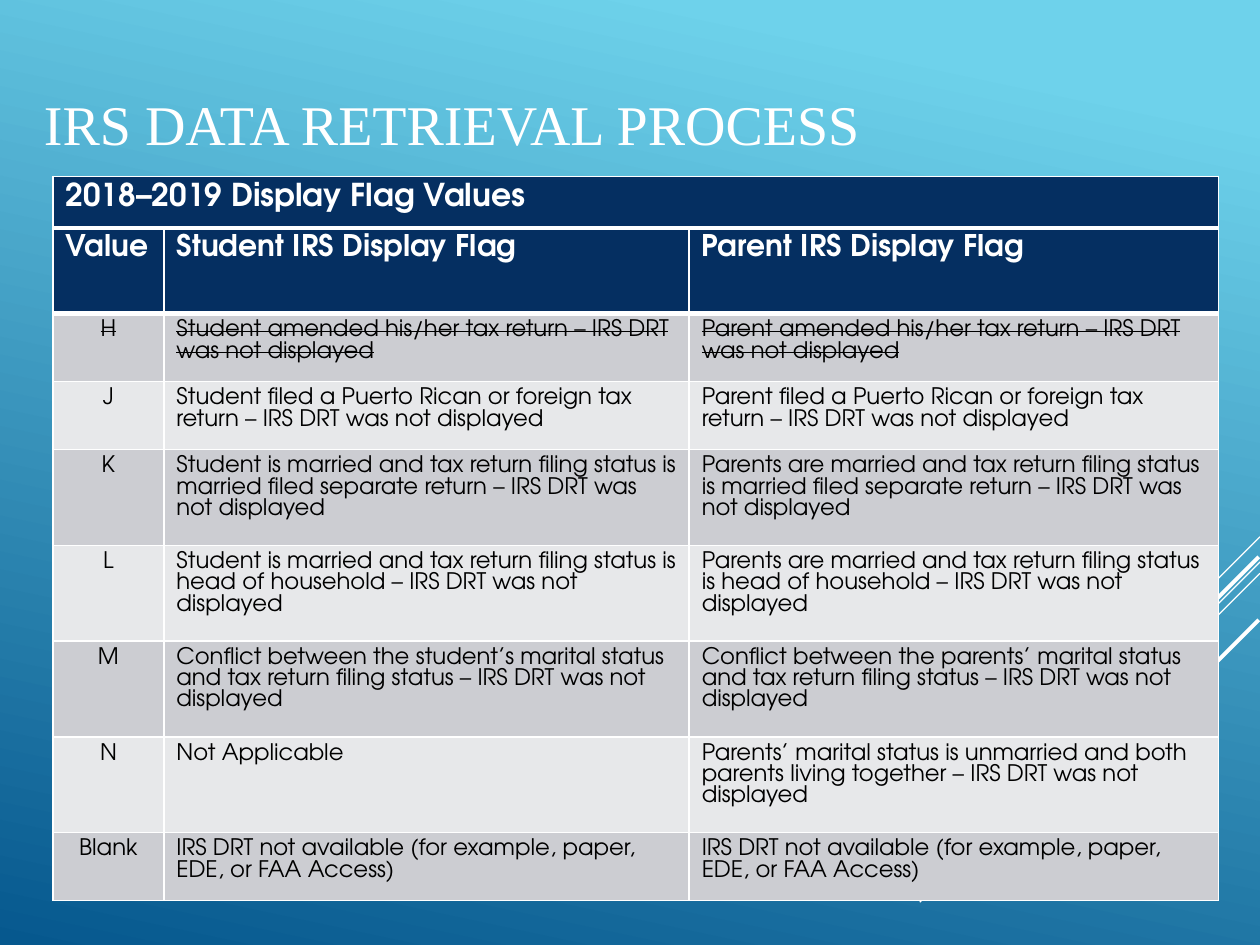
from lxml import etree
from pptx import Presentation
from pptx import util as u
from pptx.dml.color import RGBColor
from pptx.enum import shapes, text
from pptx.oxml import ns

WHITE, BLACK, NAVY = "FFFFFF", "000000", "052F61"
BANDS = ("CCCDD2", "E7E8EA")
BODY_FONT, TITLE_FONT = "TeX Gyre Adventor", "Times New Roman"
HEADER = {"ink": WHITE, "bold": True}

HEADINGS = ("Value", "Student IRS Display Flag", "Parent IRS Display Flag")
FLAGS = [
    ("H", "Student amended his/her tax return – IRS DRT was not displayed",
     "Parent amended his/her tax return – IRS DRT was not displayed"),
    ("J", "Student filed a Puerto Rican or foreign tax return – IRS DRT was not displayed",
     "Parent filed a Puerto Rican or foreign tax return – IRS DRT was not displayed"),
    ("K", "Student is married and tax return filing status is married filed separate "
          "return – IRS DRT was not displayed",
     "Parents are married and tax return filing status is married filed separate "
     "return – IRS DRT was not displayed"),
    ("L", "Student is married and tax return filing status is head of household – "
          "IRS DRT was not displayed",
     "Parents are married and tax return filing status is head of household – "
     "IRS DRT was not displayed"),
    ("M", "Conflict between the student’s marital status and tax return filing status – "
          "IRS DRT was not displayed",
     "Conflict between the parents’ marital status and tax return filing status – "
     "IRS DRT was not displayed"),
    ("N", "Not Applicable",
     "Parents’ marital status is unmarried and both parents living together – "
     "IRS DRT was not displayed"),
    ("Blank", *["IRS DRT not available (for example, paper, EDE, or FAA Access)"] * 2),
]
# Right end x, y, run to the left, line width
DIAGONALS = [(10, 4.26, 0.83, 0.75), (10, 4.46, 2.7, 0.75), (10, 4.55, 1.72, 0.75),
             (9.99, 4.42, 1.57, 2.25), (9.99, 4.92, 1.14, 2.25)]


def color(hex_code):
    return RGBColor.from_string(hex_code)


def write(frame, content, size=13, font=BODY_FONT, ink=BLACK, bold=False,
          strike=False, align=text.PP_ALIGN.LEFT):
    paragraph = frame.paragraphs[0]
    paragraph.alignment = align
    run = paragraph.add_run()
    run.text = content
    run.font.size = u.Pt(size)
    run.font.name = font
    run.font.bold = bold
    run.font.color.rgb = color(ink)
    if strike:
        run._r.get_or_add_rPr().set("strike", "sngStrike")


class FlagSlide:
    def __init__(self, deck):
        self.slide = deck.slides.add_slide(deck.slide_layouts[6])

    def background(self, start, end, angle):
        fill = self.slide.background.fill
        fill.gradient()
        # gradient_angle runs counter-clockwise
        fill.gradient_angle = 360 - angle
        for stop, (position, hex_code) in zip(fill.gradient_stops, (start, end)):
            stop.position = position
            stop.color.rgb = color(hex_code)

    def diagonal(self, x, y, run, width):
        """Line falling to the left at 45 degrees."""
        line = self.slide.shapes.add_connector(
            shapes.MSO_CONNECTOR.STRAIGHT, u.Inches(x), u.Inches(y),
            u.Inches(x - run), u.Inches(y + run))
        line.line.color.rgb = color(WHITE)
        line.line.width = u.Pt(width)
        etree.SubElement(line._element.spPr, ns.qn("a:effectLst"))

    def title(self, content, left, top, width, height):
        box = self.slide.shapes.add_textbox(*map(u.Inches, (left, top, width, height)))
        box.text_frame.word_wrap = True
        box.text_frame.vertical_anchor = text.MSO_ANCHOR.MIDDLE
        write(box.text_frame, content, size=32, font=TITLE_FONT, ink=WHITE)

    def table(self, left, top, columns, rows):
        frame = self.slide.shapes.add_table(
            len(rows), len(columns), u.Inches(left), u.Inches(top),
            u.Inches(sum(columns)), u.Inches(sum(rows)))
        for column, width in zip(frame.table.columns, columns):
            column.width = u.Inches(width)
        for row, height in zip(frame.table.rows, rows):
            row.height = u.Inches(height)
        return frame.table

    def cell(self, cell, content, fill, top=1, bottom=1, **style):
        properties = cell._tc.get_or_add_tcPr()
        for side, width in (("L", 1), ("R", 1), ("T", top), ("B", bottom)):
            border = etree.SubElement(properties, ns.qn(f"a:ln{side}"), w=str(int(u.Pt(width))))
            solid = etree.SubElement(border, ns.qn("a:solidFill"))
            etree.SubElement(solid, ns.qn("a:srgbClr"), val=WHITE)
        cell.fill.solid()
        cell.fill.fore_color.rgb = color(fill)
        write(cell.text_frame, content, **style)


def main():
    deck = Presentation()
    deck.slide_width, deck.slide_height = u.Inches(10), u.Inches(7.5)
    page = FlagSlide(deck)

    # Backdrop
    page.background((0.1, "6ED2EB"), (1, "06588E"), angle=102)
    for diagonal in DIAGONALS:
        page.diagonal(*diagonal)

    page.title("IRS DATA RETRIEVAL PROCESS", 0.25, 0.35, 8.25, 1.25)

    # Flag values: two-line rows are short, three-line rows tall
    short, tall = 0.54, 0.76
    flags = page.table(0.42, 1.81, [0.88, 4.17, 4.2],
                       [0.68, short, short, tall, tall, tall, tall, short])
    for column, heading in enumerate(HEADINGS):
        page.cell(flags.cell(0, column), heading, NAVY, bottom=3, size=17, **HEADER)
    for row, entry in enumerate(FLAGS, start=1):
        for column, content in enumerate(entry):
            page.cell(flags.cell(row, column), content, BANDS[(row - 1) % 2],
                      top=3 if row == 1 else 1, strike=entry[0] == "H",
                      align=text.PP_ALIGN.LEFT if column else text.PP_ALIGN.CENTER)

    # Caption bar above the flag values
    caption = page.table(0.42, 1.4, [9.25], [0.41])
    page.cell(caption.cell(0, 0), "2018–2019 Display Flag Values", NAVY, bottom=3,
              size=18, **HEADER)

    deck.save("out.pptx")


if __name__ == "__main__":
    main()
